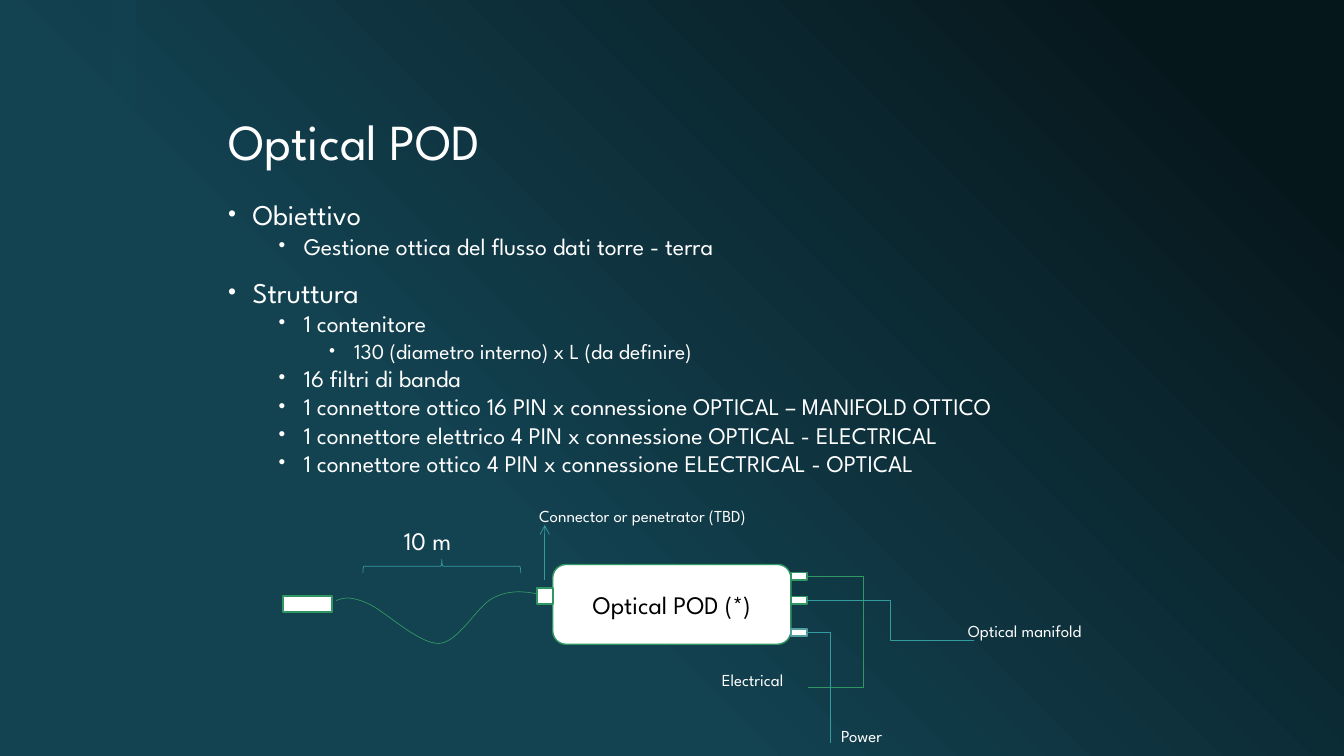
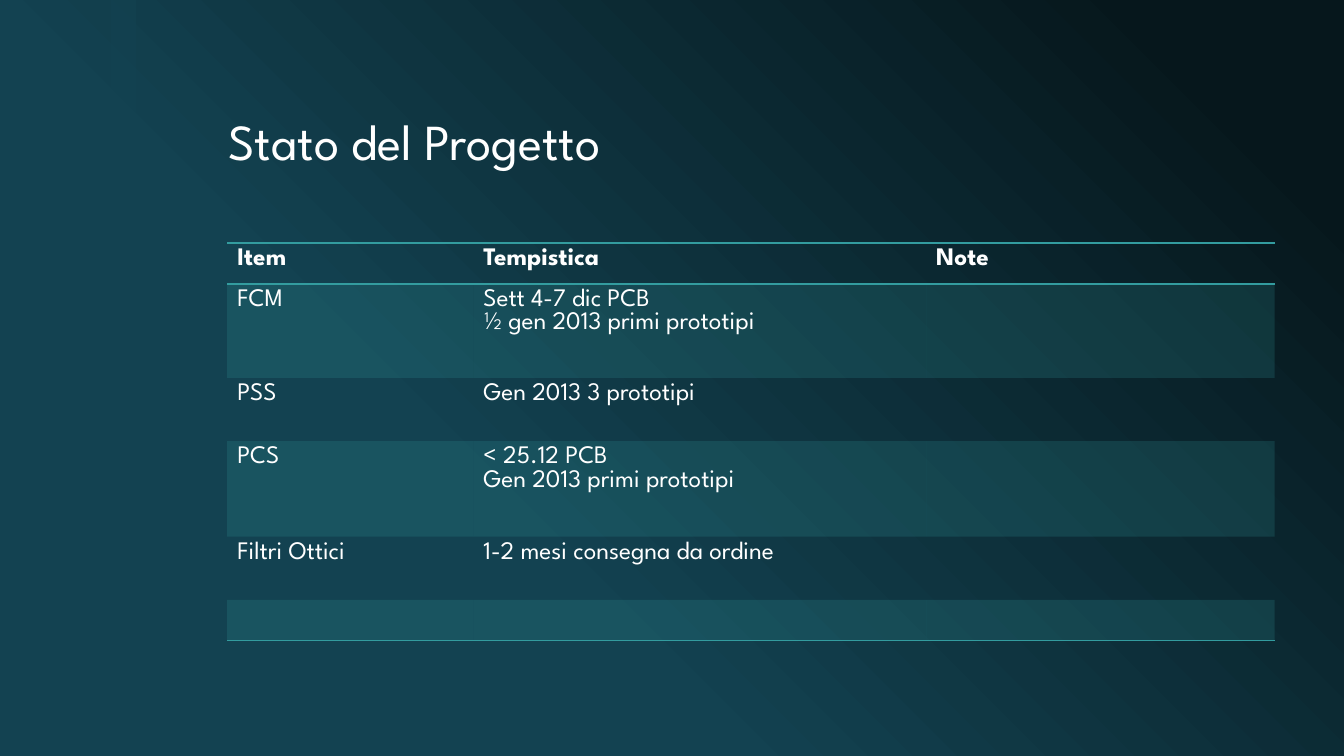
from itertools import product
from lxml.etree import SubElement
from pptx import Presentation
from pptx.dml.color import RGBColor
from pptx.enum.shapes import MSO_CONNECTOR as Wire, MSO_SHAPE as Form
from pptx.enum.text import MSO_ANCHOR as Anchor, MSO_AUTO_SIZE as Fit, PP_ALIGN as Align
from pptx.oxml import parse_xml
from pptx.oxml.ns import nsdecls, qn
from pptx.util import Pt

# Shared look: a grid of 160 columns by 90 rows, one font, one palette
COLS, ROWS, CELL = 160, 90, Pt(6)
FONT = "League Spartan"
HUES = {"night": "06171C", "deep": "134251", "teal": "339C9F", "mist": "529EA1",
        "green": "319762", "white": "FFFFFF", "black": "000000"}
RGB = {name: RGBColor.from_string(code) for name, code in HUES.items()}


def grid(*units):
    return [round(unit * CELL) for unit in units]


def ink(par, text, size, hue="white", bold=False):
    par.text = text
    font = par.font
    font.name, font.size, font.bold = FONT, Pt(size), bold
    font.color.rgb = RGB[hue]


deck = Presentation()
deck.slide_width, deck.slide_height = grid(COLS, ROWS)
master = deck.slide_master

# Master background
back = master.background.fill
back.gradient()
back.gradient_angle = 225
for stop, place, hue in zip(back.gradient_stops, (0.1, 0.65), ("night", "deep")):
    stop.position = place
    stop.color.rgb = RGB[hue]

# Slides and their titles
slides = []
for layout, text in ((1, "Optical POD"), (5, "Stato del Progetto")):
    slide = deck.slides.add_slide(deck.slide_layouts[layout])
    title = slide.shapes.title
    title.left, title.top, title.width, title.height = grid(25.97, 5, 120, 16)
    frame = title.text_frame
    frame.auto_size, frame.vertical_anchor = Fit.NONE, Anchor.BOTTOM
    head = frame.paragraphs[0]
    head.alignment, head.line_spacing = Align.LEFT, 0.9
    ink(head, text, 36)
    slides.append(slide)
pod, plan = slides

# Translucent side band, moved to the master
band = pod.shapes.add_shape(Form.RECTANGLE, *grid(13.2, 0, 3, ROWS))
band.shadow.inherit = False
band.fill.solid()
band.fill.fore_color.rgb = RGB["deep"]
band.line.fill.background()
SubElement(next(band._element.iter(qn("a:srgbClr"))), qn("a:alpha"), val="60000")
master.shapes._spTree.insert(2, band._element)

# Slide 1: list, with size, left margin, hanging indent and space before by level
LEVELS = [(20.4, 2.9, 2.9, 18), (17, 9, 3, 6), (15.3, 15, 3, 6)]
points = [
    (0, "Obiettivo"),
    (1, "Gestione ottica del flusso dati torre - terra"),
    (0, "Struttura"),
    (1, "1 contenitore"),
    (2, "130 (diametro interno) x L (da definire)"),
    (1, "16 filtri di banda"),
    (1, "1 connettore ottico 16 PIN x connessione OPTICAL – MANIFOLD OTTICO"),
    (1, "1 connettore elettrico 4 PIN x connessione OPTICAL - ELECTRICAL"),
    (1, "1 connettore ottico 4 PIN x connessione ELECTRICAL - OPTICAL"),
]
body = pod.placeholders[1]
body.left, body.top, body.width, body.height = grid(25.97, 24, 121, 35.2)
frame = body.text_frame
frame.auto_size = Fit.NONE
for row, (level, text) in enumerate(points):
    par = frame.add_paragraph() if row else frame.paragraphs[0]
    size, left, hang, gap = LEVELS[level]
    props = par._p.get_or_add_pPr()
    margin, indent = grid(left, -hang)
    props.set("marL", str(margin))
    props.set("indent", str(indent))
    SubElement(props, qn("a:buSzPct"), val="80000")
    SubElement(props, qn("a:buChar"), char="•")
    par.level, par.line_spacing = level, 0.7
    par.space_before = Pt(gap if row else 0)
    ink(par, text, size)

# Fibre: cubic curves, each given by two handles and an end point
STEPS = 16
bends = [
    ((62.3, 70.4), (60.6, 70.2), (58.7, 71.2)),
    ((56.8, 72.1), (54.7, 76.4), (52.3, 76.6)),
    ((49.8, 76.7), (45.7, 72.6), (43.7, 71.8)),
    ((41.6, 70.9), (40.8, 71.2), (40, 71.5)),
]
start = (64, 70.7)
pen = pod.shapes.build_freeform(*grid(*start))
dots = []
for near, far, end in bends:
    for step in range(1, STEPS + 1):
        t = step / STEPS
        u = 1 - t
        dots.append(grid(*(u**3 * a + 3 * u * u * t * b + 3 * u * t * t * c + t**3 * d
                           for a, b, c, d in zip(start, near, far, end))))
    start = end
pen.add_line_segments(dots, close=False)
fibre = pen.convert_to_shape()

# Housing, plugs, ports and brace
housing = pod.shapes.add_shape(Form.ROUNDED_RECTANGLE, *grid(65.8, 67.2, 28.35, 9.5))
brace = pod.shapes.add_shape(Form.RIGHT_BRACE, *grid(51.8, 58, 1.6, 18.8))
brace.rotation = 270
parts = [(housing, "white", "green", 1), (fibre, None, "green", 0.5),
         (brace, None, "teal", 0.5)]
for x, y, wide, high, hue in (
    (63.9, 70, 1.9, 1.9, "green"),
    (33.7, 71, 5.8, 1.9, "green"),
    (94.2, 68.15, 1.9, 0.9, "green"),
    (94.2, 71, 1.9, 0.9, "green"),
    (94.2, 74.85, 1.9, 0.9, "mist"),
):
    plug = pod.shapes.add_shape(Form.RECTANGLE, *grid(x, y, wide, high))
    parts.append((plug, "white", hue, 1.25))
for part, fill, hue, weight in parts:
    part.shadow.inherit = False
    if fill:
        part.fill.solid()
        part.fill.fore_color.rgb = RGB[fill]
    else:
        part.fill.background()
    part.line.color.rgb = RGB[hue]
    part.line.width = Pt(weight)
frame = housing.text_frame
frame.vertical_anchor = Anchor.MIDDLE
frame.paragraphs[0].alignment = Align.CENTER
ink(frame.paragraphs[0], "Optical POD (*)", 18, "black")

# Wires: ends, colour and the bend as a share of the width; no bend is an arrow
for ends, hue, bend in (
    ((64.85, 69.1, 64.85, 62.5), "teal", None),
    ((96, 68.6, 96.2, 81.8), "green", 34),
    ((96, 71.45, 115.9, 76.2), "teal", 0.5),
    ((96, 75.25, 98.9, 88.4), "teal", 1),
):
    kind = Wire.ELBOW if bend else Wire.STRAIGHT
    wire = pod.shapes.add_connector(kind, *grid(*ends))
    wire.line.color.rgb = RGB[hue]
    wire.line.width = Pt(0.5)
    props = wire._element.spPr
    if bend:
        guides = next(props.iter(qn("a:avLst")))
        SubElement(guides, qn("a:gd"), name="adj1", fmla=f"val {round(bend * 100000)}")
    else:
        SubElement(props.find(qn("a:ln")), qn("a:tailEnd"), type="arrow")
    SubElement(props, qn("a:effectLst"))

# Labels
for x, y, wide, high, size, text in (
    (46.9, 61.9, 11.3, 4.8, 18, "10 m"),
    (63, 59.6, 27.5, 3.6, 12, "Connector or penetrator (TBD)"),
    (114.05, 73.3, 19, 3.6, 12, "Optical manifold"),
    (84.75, 79.2, 11.3, 3.6, 12, "Electrical"),
    (98.95, 85.8, 8.5, 3.6, 12, "Power"),
):
    label = pod.shapes.add_textbox(*grid(x, y, wide, high))
    label.text_frame.word_wrap = True
    ink(label.text_frame.paragraphs[0], text, size)

# Slide 2: status table
data = [
    ("Item", "Tempistica", "Note"),
    ("FCM", "Sett 4-7 dic PCB\n½ gen 2013 primi prototipi", ""),
    ("PSS", "Gen 2013 3 prototipi", ""),
    ("PCS", "< 25.12 PCB\nGen 2013 primi prototipi", ""),
    ("Filtri Ottici", "1-2 mesi consegna da ordine", ""),
    ("", "", ""),
]
wides = grid(29.3, 53.9, 41.5)
highs = grid(4.87, 11.2, 7.53, 11.38, 7.53, 4.87)
table = plan.shapes.add_table(len(highs), len(wides), *grid(27.05, 28.93),
                              sum(wides), sum(highs)).table
table.first_row = table.horz_banding = False
# Plain table style without grid
next(table._tbl.iter(qn("a:tableStyleId"))).text = "{2D5ABB26-0587-4C30-8999-92F81FD0307C}"
for col, wide in zip(table.columns, wides):
    col.width = wide
for row, high in zip(table.rows, highs):
    row.height = high
EDGES = {0: ("lnT", "lnB"), len(highs) - 1: ("lnB",)}
for r, c in product(range(len(highs)), range(len(wides))):
    cell = table.cell(r, c)
    if r % 2:
        cell.fill.solid()
        cell.fill.fore_color.rgb = RGB["teal"]
        SubElement(next(cell._tc.iter(qn("a:srgbClr"))), qn("a:alpha"), val="20000")
    else:
        cell.fill.background()
    for spot, edge in enumerate(EDGES.get(r, ())):
        rule = parse_xml(f'<a:{edge} {nsdecls("a")} w="12700"><a:solidFill>'
                         f'<a:srgbClr val="{HUES["teal"]}"/></a:solidFill></a:{edge}>')
        cell._tc.tcPr.insert(spot, rule)
    frame = cell.text_frame
    for n, text in enumerate(data[r][c].split("\n")):
        par = frame.add_paragraph() if n else frame.paragraphs[0]
        ink(par, text, 18, bold=r == 0)

deck.save("out.pptx")
